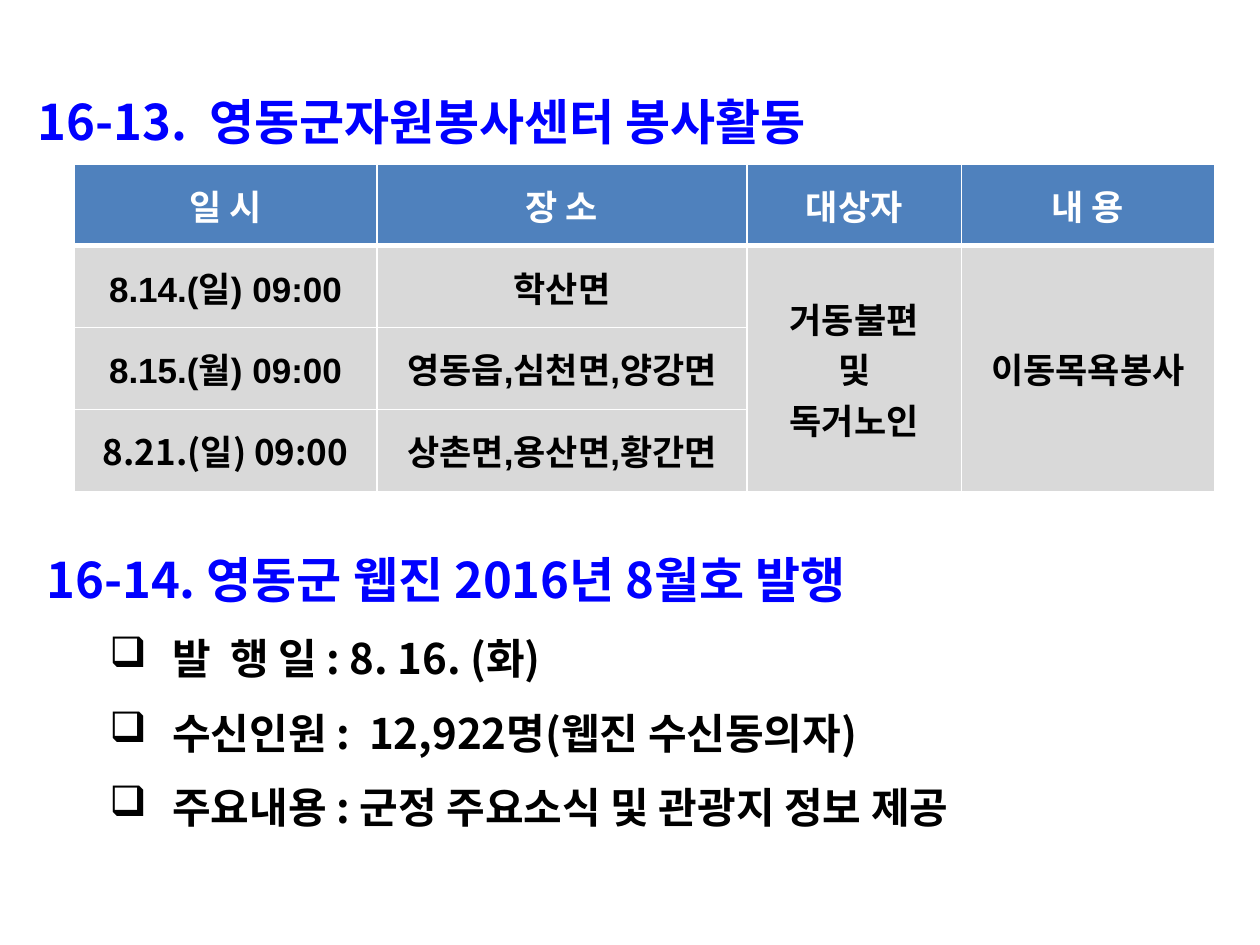
from lxml.etree import SubElement
from pptx import Presentation
from pptx.dml.color import RGBColor
from pptx.enum.text import MSO_ANCHOR, PP_ALIGN
from pptx.oxml.ns import qn
from pptx.util import Inches, Pt

KOREAN, LATIN = "Noto Sans CJK KR", "Arial"
BLUE, BLACK, WHITE = "0000FF", "000000", "FFFFFF"
HEADER_FILL, BODY_FILL = "4F81BD", "D9D9D9"

COLUMNS = [2.4, 2.94, 1.7, 2.01]
ROW_HEIGHT = 0.65
HEADINGS = ["일 시", "장 소", "대상자", "내 용"]
VISITS = [
    ("8.14.(일) 09:00", "학산면", LATIN),
    ("8.15.(월) 09:00", "영동읍,심천면,양강면", LATIN),
    ("8.21.(일) 09:00", "상촌면,용산면,황간면", KOREAN),
]
WEBZINE = [
    "발  행 일 : 8. 16. (화)",
    "수신인원 :  12,922명(웹진 수신동의자)",
    "주요내용 : 군정 주요소식 및 관광지 정보 제공",
]


def rgb(color):
    return RGBColor.from_string(color)


def add_run(p, text, size, color, font=KOREAN):
    r = p.add_run()
    r.text = text
    r.font.size = Pt(size)
    r.font.bold = True
    r.font.name = font
    r.font.color.rgb = rgb(color)
    SubElement(r.font._element, qn("a:ea"), typeface=KOREAN)


def add_text_box(s, left, top, width, height):
    tf = s.shapes.add_textbox(Inches(left), Inches(top), Inches(width), Inches(height)).text_frame
    tf.word_wrap = True
    return tf


def add_heading(tf, text, spacing):
    p = tf.paragraphs[0]
    p.line_spacing = spacing
    add_run(p, text, 28, BLUE)


def add_bullet(tf, text):
    p = tf.add_paragraph()
    p.level = 1
    p.line_spacing = 1.48
    pPr = p._p.get_or_add_pPr()
    pPr.set("marL", str(Inches(1)))
    pPr.set("indent", str(Inches(-0.5)))
    bullet_color = SubElement(pPr, qn("a:buClr"))
    SubElement(bullet_color, qn("a:srgbClr"), val=BLACK)
    SubElement(pPr, qn("a:buChar"), char="❑")
    add_run(p, text, 24, BLACK)


def set_borders(cell, top, bottom):
    """Draw white borders; top and bottom are widths in points."""
    tcPr = cell._tc.get_or_add_tcPr()
    for i, (side, width) in enumerate([("L", 1), ("R", 1), ("T", top), ("B", bottom)]):
        ln = SubElement(tcPr, qn(f"a:ln{side}"), w=str(Pt(width)))
        fill = SubElement(ln, qn("a:solidFill"))
        SubElement(fill, qn("a:srgbClr"), val=WHITE)
        tcPr.insert(i, ln)


def fill_cell(cell, lines, color, font=LATIN):
    cell.vertical_anchor = MSO_ANCHOR.MIDDLE
    cell.margin_left = cell.margin_right = Inches(0.05)
    tf = cell.text_frame
    for i, line in enumerate(lines):
        p = tf.add_paragraph() if i else tf.paragraphs[0]
        p.alignment = PP_ALIGN.CENTER
        add_run(p, line, 20, color, font)


def add_schedule(s):
    rows = len(VISITS) + 1
    table = s.shapes.add_table(rows, len(COLUMNS), Inches(0.59), Inches(1.3),
                               Inches(sum(COLUMNS)), Inches(rows * ROW_HEIGHT)).table
    for column, width in zip(table.columns, COLUMNS):
        column.width = Inches(width)
    for i, row in enumerate(table.rows):
        row.height = Inches(ROW_HEIGHT)
        for cell in row.cells:
            cell.fill.solid()
            cell.fill.fore_color.rgb = rgb(BODY_FILL if i else HEADER_FILL)
            set_borders(cell, top=3 if i == 1 else 1, bottom=1 if i else 3)

    for j, heading in enumerate(HEADINGS):
        fill_cell(table.cell(0, j), [heading], WHITE)
    for i, (date, place, date_font) in enumerate(VISITS, 1):
        fill_cell(table.cell(i, 0), [date], BLACK, date_font)
        fill_cell(table.cell(i, 1), [place], BLACK)
    for j, lines in [(2, ["거동불편", "및", "독거노인"]), (3, ["이동목욕봉사"])]:
        table.cell(1, j).merge(table.cell(rows - 1, j))
        fill_cell(table.cell(1, j), lines, BLACK)


def main():
    prs = Presentation()
    prs.slide_width, prs.slide_height = Inches(10), Inches(7.5)
    s = prs.slides.add_slide(prs.slide_layouts[6])

    add_heading(add_text_box(s, 0.2, 0.44, 9.49, 3.31), "16-13.  영동군자원봉사센터 봉사활동", 1.5)
    add_schedule(s)
    tf = add_text_box(s, 0.27, 4.22, 9.3, 2.61)
    add_heading(tf, "16-14. 영동군 웹진 2016년 8월호 발행", 1.2)
    for text in WEBZINE:
        add_bullet(tf, text)

    prs.save("out.pptx")


if __name__ == "__main__":
    main()
